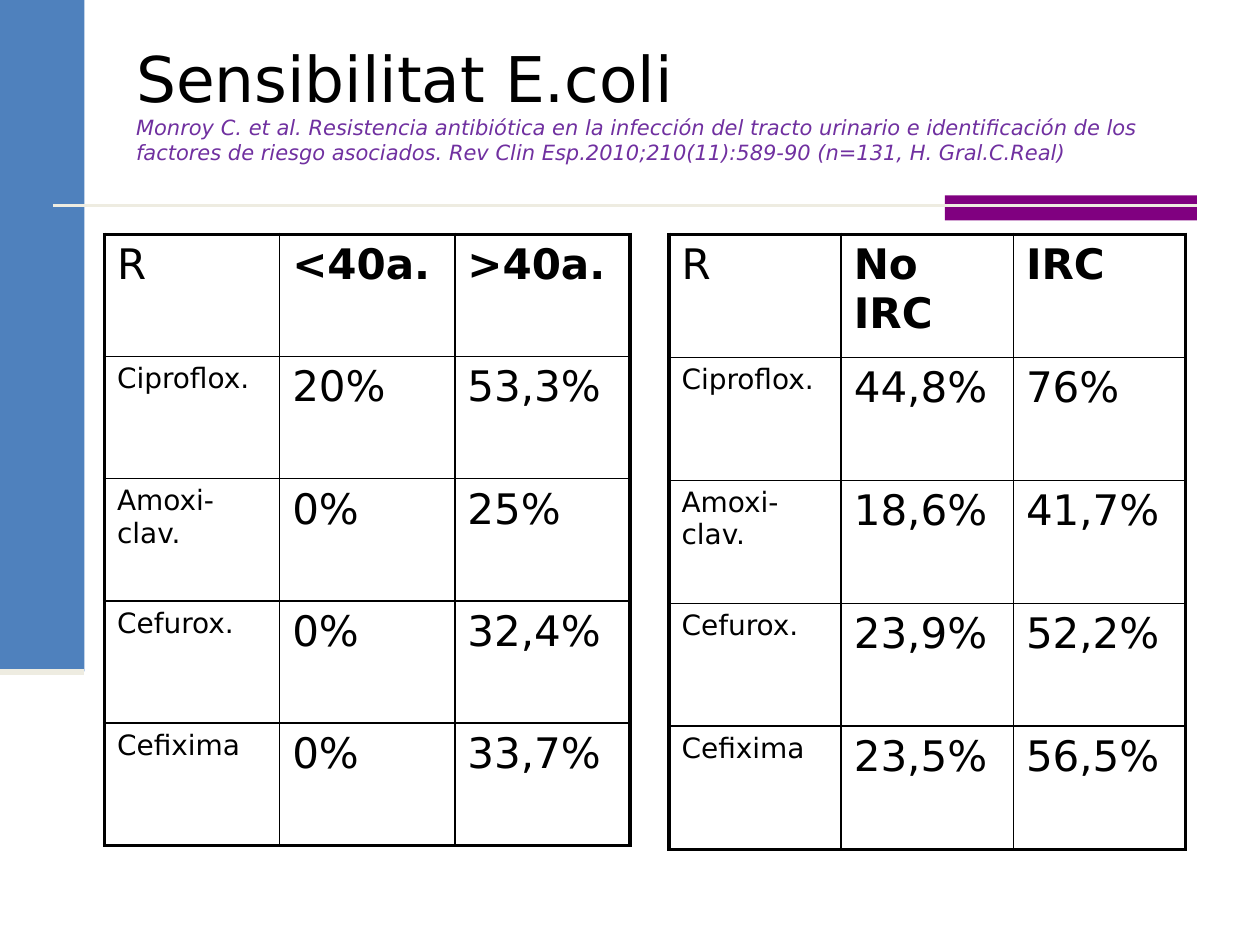
from pptx import Presentation
from pptx.dml.color import RGBColor
from pptx.enum.shapes import MSO_CONNECTOR as Link, MSO_SHAPE as Form
from pptx.enum.text import MSO_ANCHOR as Anchor, MSO_AUTO_SIZE as Fit, PP_ALIGN as Align
from pptx.oxml.ns import qn
from pptx.util import Inches, Pt
from lxml.etree import SubElement

FONT = "DejaVu Sans"
INK = "000000"
TITLE = "Sensibilitat E.coli"
CITE = ("Monroy C. et al. Resistencia antibiótica en la infección del tracto urinario "
        "e identificación de los factores de riesgo asociados. "
        "Rev Clin Esp.2010;210(11):589-90 (n=131, H. Gral.C.Real)")
DRUGS = ["Ciproflox.", "Amoxi-clav.", "Cefurox.", "Cefixima"]
TABLES = [
    {"box": (0.83, 1.86, 4.17, 4.85), "head": ["R", "<40a.", ">40a."],
     "data": [("20%", "53,3%"), ("0%", "25%"), ("0%", "32,4%"), ("0%", "33,7%")]},
    {"box": (5.31, 1.86, 4.1, 4.88), "head": ["R", "No IRC", "IRC"],
     "data": [("44,8%", "76%"), ("18,6%", "41,7%"), ("23,9%", "52,2%"), ("23,5%", "56,5%")]},
]
BARS = [((0, 0, 0.67, 5.33), "4F81BD"), ((7.5, 1.55, 2, 0.2), "800080")]
RULES = [((0.42, 1.63, 9.5, 1.63), 1.5), ((0, 5.33, 0.67, 5.33), 3.5)]
RULE_INK = "EEECE1"
THIN, THICK = 1, 2.25


def paint(color, code):
    """Set a colour format to a hex colour."""
    color.rgb = RGBColor.from_string(code)


def style(run, size, code=INK, bold=False, italic=False):
    """Format one run of text."""
    font = run.font
    font.name, font.size, font.bold, font.italic = FONT, Pt(size), bold, italic
    paint(font.color, code)


def add_bar(slide, box, code):
    """Draw a plain filled rectangle."""
    bar = slide.shapes.add_shape(Form.RECTANGLE, *map(Inches, box))
    bar.shadow.inherit = False
    bar.fill.solid()
    paint(bar.fill.fore_color, code)
    bar.line.fill.background()


def add_rule(slide, ends, width):
    """Draw a straight line."""
    rule = slide.shapes.add_connector(Link.STRAIGHT, *map(Inches, ends))
    rule.line.width = Pt(width)
    paint(rule.line.color, RULE_INK)
    SubElement(rule._element.spPr, qn("a:effectLst"))


def set_title(title):
    """Place the heading and its citation in the title placeholder."""
    title.left, title.top, title.width, title.height = map(Inches, (0.98, 0, 8.5, 1.62))
    frame = title.text_frame
    frame.text = f"{TITLE}\v{CITE}"
    frame.word_wrap, frame.auto_size = True, Fit.NONE
    frame.vertical_anchor = Anchor.MIDDLE
    para = frame.paragraphs[0]
    para.alignment = Align.LEFT
    head, cite = para.runs
    style(head, 36)
    style(cite, 12, "7030A0", italic=True)
    SubElement(para._p.find(qn("a:br")), qn("a:rPr"), sz="3600")


def set_edges(cell, outer):
    """Give a cell its four borders, thick where it meets the table's outer edge."""
    props = cell._tc.get_or_add_tcPr()
    for side in "LRTB":
        width = Pt(THICK if side in outer else THIN)
        line = SubElement(props, qn(f"a:ln{side}"), w=str(int(width)))
        fill = SubElement(line, qn("a:solidFill"))
        SubElement(fill, qn("a:srgbClr"), val=INK)


def add_grid(slide, box, head, data):
    """Build one table of resistance rates."""
    rows = [head] + [[drug, *rates] for drug, rates in zip(DRUGS, data)]
    last_row, last_col = len(rows) - 1, len(head) - 1
    table = slide.shapes.add_table(len(rows), len(head), *map(Inches, box)).table
    table.first_row = table.horz_banding = False
    for r, row in enumerate(rows):
        for c, text in enumerate(row):
            cell = table.cell(r, c)
            cell.text = text
            small = r > 0 and c == 0
            style(cell.text_frame.paragraphs[0].runs[0], 16 if small else 24,
                  bold=r == 0 and c > 0)
            spots = {"L": c == 0, "R": c == last_col, "T": r == 0, "B": r == last_row}
            set_edges(cell, [side for side, on in spots.items() if on])
            cell.fill.background()


def main():
    """Build and save the slide."""
    deck = Presentation()
    deck.slide_width, deck.slide_height = Inches(10), Inches(7.5)
    slide = deck.slides.add_slide(deck.slide_layouts[5])
    for box, code in BARS:
        add_bar(slide, box, code)
    for ends, width in RULES:
        add_rule(slide, ends, width)
    set_title(slide.shapes.title)
    for spec in TABLES:
        add_grid(slide, **spec)
    deck.save("out.pptx")


if __name__ == "__main__":
    main()
